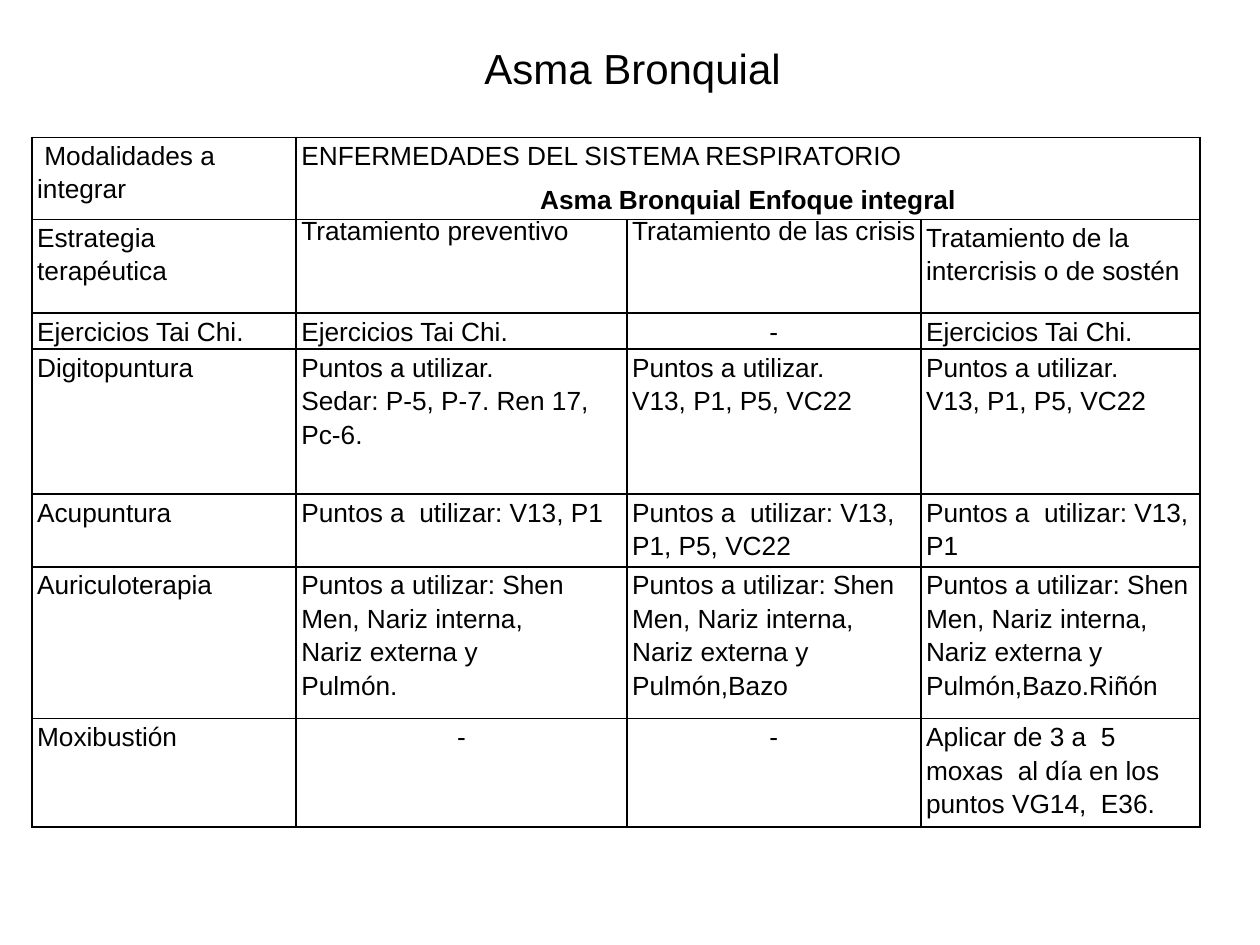
from lxml.etree import SubElement
from pptx import Presentation
from pptx.dml.color import RGBColor
from pptx.enum.text import PP_ALIGN
from pptx.oxml.ns import qn
from pptx.util import Pt

COLORS = {"text": "000000", "border": "000000", "background": "FFFFFF"}

COLUMN_WIDTHS = [151, 189, 168, 159.5]
ROW_HEIGHTS = [46.8, 53.6, 20.6, 82.9, 41.6, 86.6, 62.2]

EXERCISES = "Ejercicios Tai Chi."
PRESSURE_POINTS = "Puntos a utilizar.\n"
CRISIS_POINTS = "V13, P1, P5, VC22"
NEEDLE_POINTS = "Puntos a  utilizar: V13, P1"
EAR_POINTS = "Puntos a utilizar: Shen Men, Nariz interna,\nNariz externa y\n"

TREATMENTS = [
    [" Modalidades a integrar",
     "ENFERMEDADES DEL SISTEMA RESPIRATORIO\nAsma Bronquial Enfoque integral", "", ""],
    ["Estrategia terapéutica", "Tratamiento preventivo", "Tratamiento de las crisis",
     "Tratamiento de la intercrisis o de sostén"],
    [EXERCISES, EXERCISES, "-", EXERCISES],
    ["Digitopuntura", PRESSURE_POINTS + "Sedar: P-5, P-7. Ren 17, Pc-6.",
     PRESSURE_POINTS + CRISIS_POINTS, PRESSURE_POINTS + CRISIS_POINTS],
    ["Acupuntura", NEEDLE_POINTS, NEEDLE_POINTS + ", P5, VC22", NEEDLE_POINTS],
    ["Auriculoterapia", EAR_POINTS + "Pulmón.", EAR_POINTS + "Pulmón,Bazo",
     EAR_POINTS + "Pulmón,Bazo.Riñón"],
    ["Moxibustión", "-", "-",
     "Aplicar de 3 a  5 moxas  al día en los puntos VG14,  E36."],
]


class SlideBuilder:
    font = "Arial"
    title_size = 24
    table_size = 15

    def __init__(self, slide):
        self.slide = slide
        fill = slide.background.fill
        fill.solid()
        fill.fore_color.rgb = RGBColor.from_string(COLORS["background"])

    def format_paragraph(self, paragraph, size, align=PP_ALIGN.LEFT, spacing=1.15, bold=False):
        paragraph.alignment = align
        paragraph.line_spacing = spacing
        for run in paragraph.runs:
            run.font.name = self.font
            run.font.size = Pt(size)
            run.font.bold = bold
            run.font.color.rgb = RGBColor.from_string(COLORS["text"])

    def title(self, text, left, top, width, height):
        shape = self.slide.shapes.add_textbox(Pt(left), Pt(top), Pt(width), Pt(height))
        shape.text_frame.word_wrap = True
        shape.text_frame.text = text
        self.format_paragraph(shape.text_frame.paragraphs[0], self.title_size,
                              PP_ALIGN.CENTER, 0.9)

    def border(self, cell):
        properties = cell._tc.get_or_add_tcPr()
        for side in ("a:lnL", "a:lnR", "a:lnT", "a:lnB"):
            line = SubElement(properties, qn(side), w=str(Pt(1)))
            fill = SubElement(line, qn("a:solidFill"))
            SubElement(fill, qn("a:srgbClr"), val=COLORS["border"])

    def cell(self, cell, text):
        cell.margin_left = cell.margin_right = Pt(3)
        cell.margin_top = cell.margin_bottom = Pt(0)
        self.border(cell)
        cell.fill.background()
        cell.text_frame.text = text
        align = PP_ALIGN.CENTER if text == "-" else PP_ALIGN.LEFT
        for paragraph in cell.text_frame.paragraphs:
            self.format_paragraph(paragraph, self.table_size, align)

    def table(self, rows, left, top, widths, heights):
        frame = self.slide.shapes.add_table(len(rows), len(widths), Pt(left), Pt(top),
                                            Pt(sum(widths)), Pt(sum(heights)))
        table = frame.table
        table.first_row = table.horz_banding = False
        for column, width in zip(table.columns, widths):
            column.width = Pt(width)
        for row, height, texts in zip(table.rows, heights, rows):
            row.height = Pt(height)
            for cell, text in zip(row.cells, texts):
                self.cell(cell, text)
        return table


def main():
    presentation = Presentation()
    presentation.slide_width, presentation.slide_height = Pt(720), Pt(540)
    builder = SlideBuilder(presentation.slides.add_slide(presentation.slide_layouts[6]))

    table = builder.table(TREATMENTS, 18.25, 78.5, COLUMN_WIDTHS, ROW_HEIGHTS)
    heading = table.cell(0, 1)
    heading.merge(table.cell(0, 3))
    system, approach = heading.text_frame.paragraphs
    system.space_after = Pt(10)
    builder.format_paragraph(approach, builder.table_size, PP_ALIGN.CENTER, 0.9, True)
    for column in (1, 2):
        builder.format_paragraph(table.cell(1, column).text_frame.paragraphs[0],
                                 builder.table_size, spacing=0.9)

    builder.title("Asma Bronquial", 235.5, 23.75, 252, 32.5)
    presentation.save("out.pptx")


if __name__ == "__main__":
    main()
